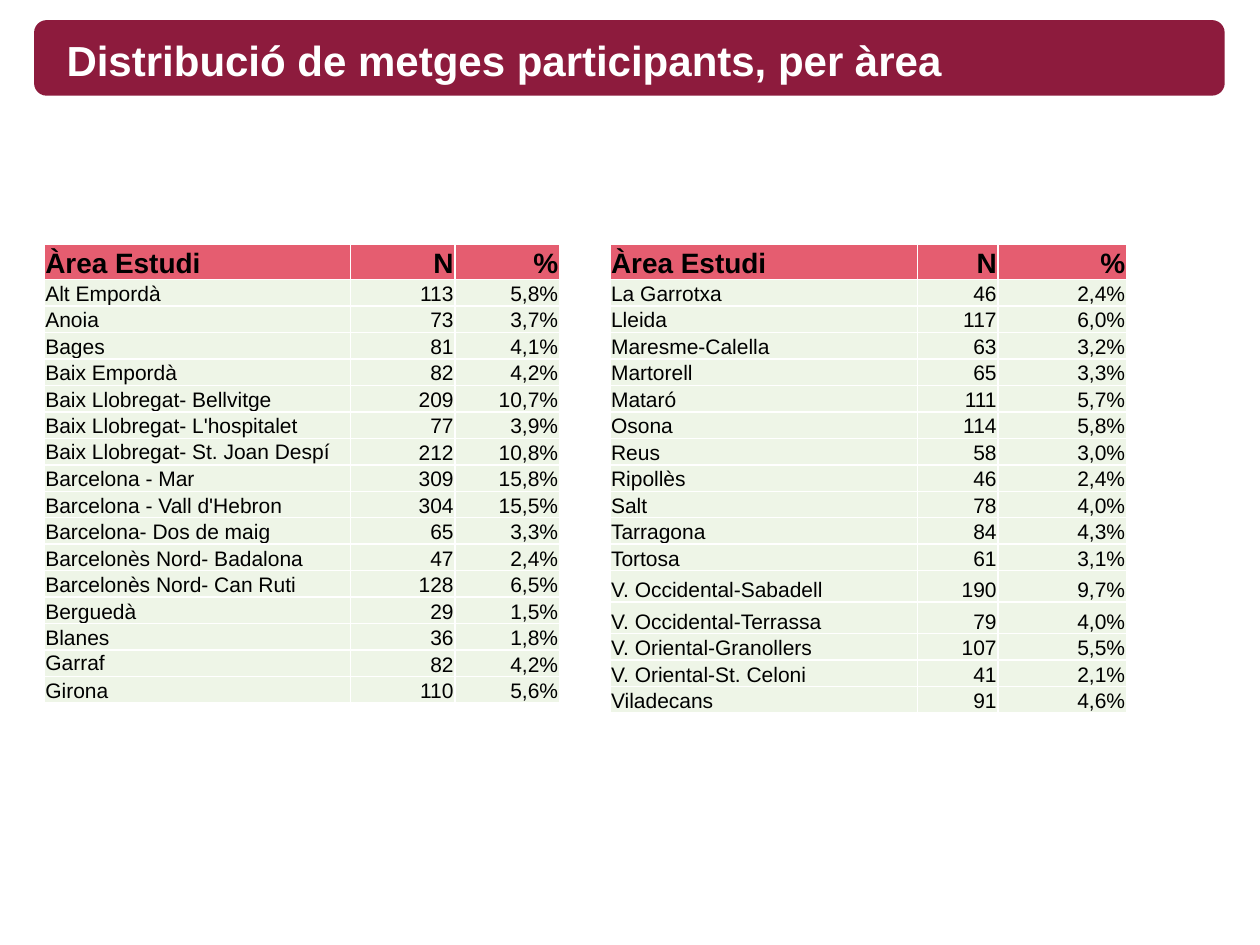
from lxml import etree
from pptx import Presentation
from pptx.dml.color import RGBColor
from pptx.enum.shapes import MSO_SHAPE
from pptx.enum.text import MSO_ANCHOR, PP_ALIGN
from pptx.oxml.ns import qn
from pptx.util import Inches, Pt

ROUNDED = MSO_SHAPE.ROUNDED_RECTANGLE
TOP, MIDDLE, BOTTOM = MSO_ANCHOR.TOP, MSO_ANCHOR.MIDDLE, MSO_ANCHOR.BOTTOM
LEFT, RIGHT = PP_ALIGN.LEFT, PP_ALIGN.RIGHT

MAROON = RGBColor(0x8D, 0x1B, 0x3D)
ROSE = RGBColor(0xE5, 0x5D, 0x70)
PALE_GREEN = RGBColor(0xEE, 0xF5, 0xE7)
WHITE = RGBColor(0xFF, 0xFF, 0xFF)
BLACK = RGBColor(0, 0, 0)
FONT = "Arial"

HEADER = ("Àrea Estudi", "N", "%")
HEADER_HEIGHT = 0.25
TABLE_TOP = 1.94

AREAS_LEFT = [
    ("Alt Empordà", "113", "5,8%"),
    ("Anoia", "73", "3,7%"),
    ("Bages", "81", "4,1%"),
    ("Baix Empordà", "82", "4,2%"),
    ("Baix Llobregat- Bellvitge", "209", "10,7%"),
    ("Baix Llobregat- L'hospitalet", "77", "3,9%"),
    ("Baix Llobregat- St. Joan Despí", "212", "10,8%"),
    ("Barcelona - Mar", "309", "15,8%"),
    ("Barcelona - Vall d'Hebron", "304", "15,5%"),
    ("Barcelona- Dos de maig", "65", "3,3%"),
    ("Barcelonès Nord- Badalona", "47", "2,4%"),
    ("Barcelonès Nord- Can Ruti", "128", "6,5%"),
    ("Berguedà", "29", "1,5%"),
    ("Blanes", "36", "1,8%"),
    ("Garraf", "82", "4,2%"),
    ("Girona", "110", "5,6%"),
]
AREAS_RIGHT = [
    ("La Garrotxa", "46", "2,4%"),
    ("Lleida", "117", "6,0%"),
    ("Maresme-Calella", "63", "3,2%"),
    ("Martorell", "65", "3,3%"),
    ("Mataró", "111", "5,7%"),
    ("Osona", "114", "5,8%"),
    ("Reus", "58", "3,0%"),
    ("Ripollès", "46", "2,4%"),
    ("Salt", "78", "4,0%"),
    ("Tarragona", "84", "4,3%"),
    ("Tortosa", "61", "3,1%"),
    ("V. Occidental-Sabadell", "190", "9,7%"),
    ("V. Occidental-Terrassa", "79", "4,0%"),
    ("V. Oriental-Granollers", "107", "5,5%"),
    ("V. Oriental-St. Celoni", "41", "2,1%"),
    ("Viladecans", "91", "4,6%"),
]
TALL_ROWS = {"V. Occidental-Sabadell": 0.25, "V. Occidental-Terrassa": 0.25}
CELL_ANCHORS = {"Baix Llobregat- St. Joan Despí": MIDDLE, "Garraf": TOP}


def add_run(p, text, size, color, bold):
    r = p.add_run()
    r.text = text
    r.font.name = FONT
    r.font.size = Pt(size)
    r.font.bold = bold
    r.font.color.rgb = color


def add_title(slide, text):
    banner = slide.shapes.add_shape(
        ROUNDED, Inches(0.27), Inches(0.16), Inches(9.45), Inches(0.6))
    banner.shadow.inherit = False
    banner.fill.solid()
    banner.fill.fore_color.rgb = MAROON
    banner.line.fill.background()

    box = slide.shapes.add_textbox(
        Inches(0.43), Inches(0.24), Inches(9.07), Inches(0.47))
    tf = box.text_frame
    tf.word_wrap = True
    tf.vertical_anchor = MIDDLE
    add_run(tf.paragraphs[0], text, 24, WHITE, True)


def set_borders(cell, color, width):
    tc_pr = cell._tc.get_or_add_tcPr()
    for i, side in enumerate(("a:lnL", "a:lnR", "a:lnT", "a:lnB")):
        ln = etree.Element(qn(side), w=str(Pt(width)))
        fill = etree.SubElement(ln, qn("a:solidFill"))
        etree.SubElement(fill, qn("a:srgbClr"), val=str(color))
        tc_pr.insert(i, ln)  # borders come before the fill


def fill_cell(cell, text, align, is_header):
    cell.margin_left = cell.margin_right = cell.margin_top = Inches(0.01)
    cell.margin_bottom = 0
    cell.vertical_anchor = CELL_ANCHORS.get(text, BOTTOM)
    cell.fill.solid()
    cell.fill.fore_color.rgb = ROSE if is_header else PALE_GREEN
    set_borders(cell, WHITE, 1)
    p = cell.text_frame.paragraphs[0]
    p.alignment = align
    add_run(p, text, 16 if is_header else 12, BLACK, is_header)


def add_area_table(slide, left, col_widths, areas, height):
    """Rows share the height that the header and the tall rows leave."""
    tall = [TALL_ROWS[a[0]] for a in areas if a[0] in TALL_ROWS]
    row_height = (height - HEADER_HEIGHT - sum(tall)) / (len(areas) - len(tall))
    rows = [HEADER] + areas
    table = slide.shapes.add_table(
        len(rows), len(HEADER), Inches(left), Inches(TABLE_TOP),
        Inches(sum(col_widths)), Inches(height)).table
    for column, width in zip(table.columns, col_widths):
        column.width = Inches(width)
    for i, values in enumerate(rows):
        is_header = i == 0
        table.rows[i].height = Inches(
            HEADER_HEIGHT if is_header else TALL_ROWS.get(values[0], row_height))
        for j, text in enumerate(values):
            fill_cell(table.cell(i, j), text, RIGHT if j else LEFT, is_header)


def main():
    prs = Presentation()
    prs.slide_width, prs.slide_height = Inches(10), Inches(7.5)
    slide = prs.slides.add_slide(prs.slide_layouts[6])
    add_title(slide, "Distribució de metges participants, per àrea")
    add_area_table(slide, 0.35, (2.43, 0.83, 0.83), AREAS_LEFT, 3.58)
    add_area_table(slide, 4.84, (2.44, 0.64, 1.02), AREAS_RIGHT, 3.61)
    prs.save("out.pptx")


if __name__ == "__main__":
    main()
